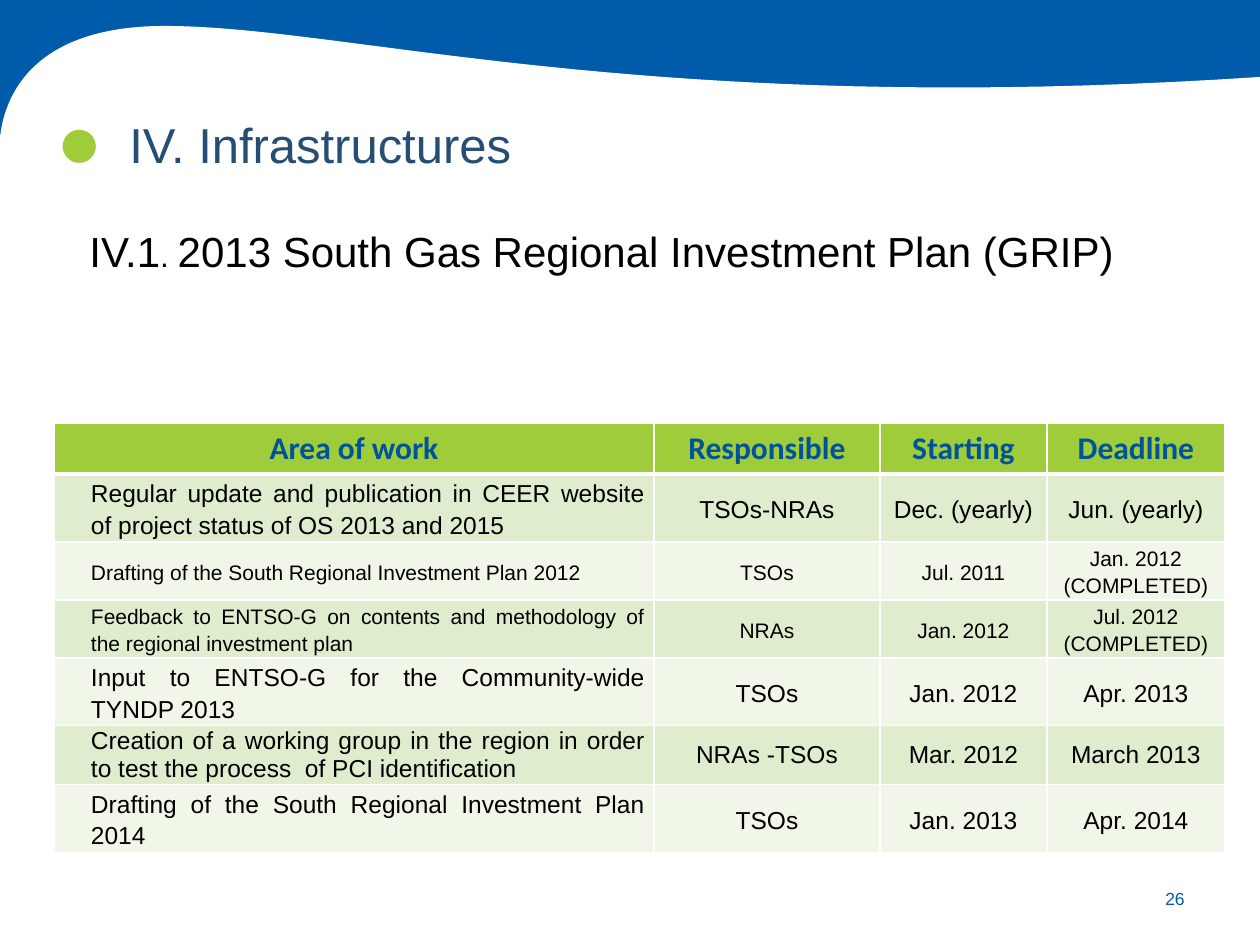
"""Build the infrastructures slide with its regional investment plan table."""
import pptx
import pptx.dml.color
import pptx.enum.shapes
import pptx.enum.text
import pptx.oxml
import pptx.oxml.ns
import pptx.util

PX = 914400 / 126
COLORS = {
    "blue": "005BAB", "green": "9ECC3B", "title": "264D74", "heading": "00529B",
    "text": "000000", "white": "FFFFFF", "odd": "DFECCE", "even": "F0F6E8",
}
ALIGN = pptx.enum.text.PP_ALIGN
MIDDLE = pptx.enum.text.MSO_ANCHOR.MIDDLE


def px(value):
    return round(value * PX)


def style(para, size, color, align, face="Arial", bold=False, indent=(0, 0), spacing=1.0):
    properties = para._p.get_or_add_pPr()
    properties.set("marL", str(px(indent[0])))
    properties.set("indent", str(px(indent[1])))
    para.alignment = align
    para.line_spacing = spacing
    para.font.name = face
    para.font.size = pptx.util.Pt(size)
    para.font.bold = bold
    para.font.color.rgb = pptx.dml.color.RGBColor.from_string(COLORS[color])


deck = pptx.Presentation()
deck.slide_width, deck.slide_height = px(1260), px(945)
page = deck.slides.add_slide(deck.slide_layouts[6])

band = page.shapes.add_shape(pptx.enum.shapes.MSO_SHAPE.RECTANGLE, 0, 0, px(1260), px(145))

curves = [
    [(1260, 77), (642, 118), (348, 26), (165, 26)],
    [(165, 26), (29, 26), (4, 100), (0, 138)],
]
wave_points = []
for a, b, c, d in curves:
    for step in range(1, 41):
        t = step / 40
        wave_points.append(tuple(
            px((1 - t) ** 3 * a[axis] + 3 * (1 - t) ** 2 * t * b[axis]
               + 3 * (1 - t) * t ** 2 * c[axis] + t ** 3 * d[axis])
            for axis in (0, 1)))
builder = page.shapes.build_freeform(px(1260), px(77))
builder.add_line_segments(wave_points + [(0, px(945)), (px(1260), px(945))], close=True)
wave = builder.convert_to_shape()

for shape, color in [(band, "blue"), (wave, "white")]:
    shape.shadow.inherit = False
    shape.fill.solid()
    shape.fill.fore_color.rgb = pptx.dml.color.RGBColor.from_string(COLORS[color])
    shape.line.fill.background()

TOP, BOTTOM = pptx.enum.text.MSO_ANCHOR.TOP, pptx.enum.text.MSO_ANCHOR.BOTTOM
labels = [
    ((1126, 874, 71, 50), MIDDLE, [("26", 10)], "blue", ALIGN.RIGHT, (0, 0), 1.0),
    ((44, 72, 69, 118), BOTTOM, [("●", 44)], "green", ALIGN.CENTER, (0, 0), 1.0),
    ((105, 108, 1102, 72), TOP, [("IV. Infrastructures", 28)], "title", ALIGN.JUSTIFY, (11, 1), 1.0),
    ((64, 209, 1077, 68), TOP,
     [("IV.1", 24), (". ", 18), ("2013 South Gas Regional Investment Plan (GRIP)", 24)],
     "text", ALIGN.LEFT, (49, -36), 1.2),
]
for bounds, anchor, spans, color, align, indent, spacing in labels:
    box = page.shapes.add_textbox(*map(px, bounds))
    box.text_frame.word_wrap = True
    box.text_frame.vertical_anchor = anchor
    para = box.text_frame.paragraphs[0]
    style(para, spans[0][1], color, align, indent=indent, spacing=spacing)
    for text, size in spans:
        span = para.add_run()
        span.text = text
        span.font.size = pptx.util.Pt(size)

headings = ["Area of work", "Responsible", "Starting", "Deadline"]
tasks = [
    (68, 14, 1.15, "Regular update and publication in CEER website of project status of OS 2013 and 2015",
     "TSOs-NRAs", "Dec. (yearly)", "Jun. (yearly)"),
    (58, 12, 1.15, "Drafting of the South Regional Investment Plan 2012",
     "TSOs", "Jul. 2011", "Jan. 2012 (COMPLETED)"),
    (58, 12, 1.15, "Feedback to ENTSO-G on contents and methodology of the regional investment plan",
     "NRAs", "Jan. 2012", "Jul. 2012 (COMPLETED)"),
    (67, 14, 1.15, "Input to ENTSO-G for the Community-wide TYNDP 2013",
     "TSOs", "Jan. 2012", "Apr. 2013"),
    (59, 14, 1.0, "Creation of a working group in the region in order to test the process  of PCI identification",
     "NRAs -TSOs", "Mar. 2012", "March 2013"),
    (68, 14, 1.15, "Drafting of the South Regional Investment Plan 2014",
     "TSOs", "Jan. 2013", "Apr. 2014"),
]
rows = [(51, 18, 1.0, *headings)] + tasks
widths = [600, 226, 167, 178]
height = sum(row[0] for row in rows)
frame = page.shapes.add_table(len(rows), len(widths), px(54), px(423), px(sum(widths)), px(height))
table = frame.table
table.horz_banding = False
for column, width in zip(table.columns, widths):
    column.width = px(width)

for r, (row_height, size, spacing, *texts) in enumerate(rows):
    table.rows[r].height = px(row_height)
    header = r == 0
    fill = "green" if header else "odd" if r % 2 else "even"
    for c, text in enumerate(texts):
        cell = table.cell(r, c)
        cell.text = text
        para = cell.text_frame.paragraphs[0]
        if header:
            style(para, size, "heading", ALIGN.CENTER, "Calibri", True)
        else:
            cell.vertical_anchor = MIDDLE
            cell.margin_left = cell.margin_right = px(9)
            cell.margin_top = cell.margin_bottom = 0
            align, indent = (ALIGN.CENTER, (0, 0)) if c else (ALIGN.JUSTIFY, (28, 0))
            style(para, size, "text", align, indent=indent, spacing=spacing)
        properties = cell._tc.get_or_add_tcPr()
        for side in "LRTB":
            heavy = (header and side == "B") or (r == 1 and side == "T")
            points = 3 if heavy else 1
            properties.append(pptx.oxml.parse_xml(
                f'<a:ln{side} {pptx.oxml.ns.nsdecls("a")} w="{points * 12700}"><a:solidFill>'
                f'<a:srgbClr val="{COLORS["white"]}"/></a:solidFill></a:ln{side}>'))
        cell.fill.solid()
        cell.fill.fore_color.rgb = pptx.dml.color.RGBColor.from_string(COLORS[fill])

deck.save("out.pptx")
